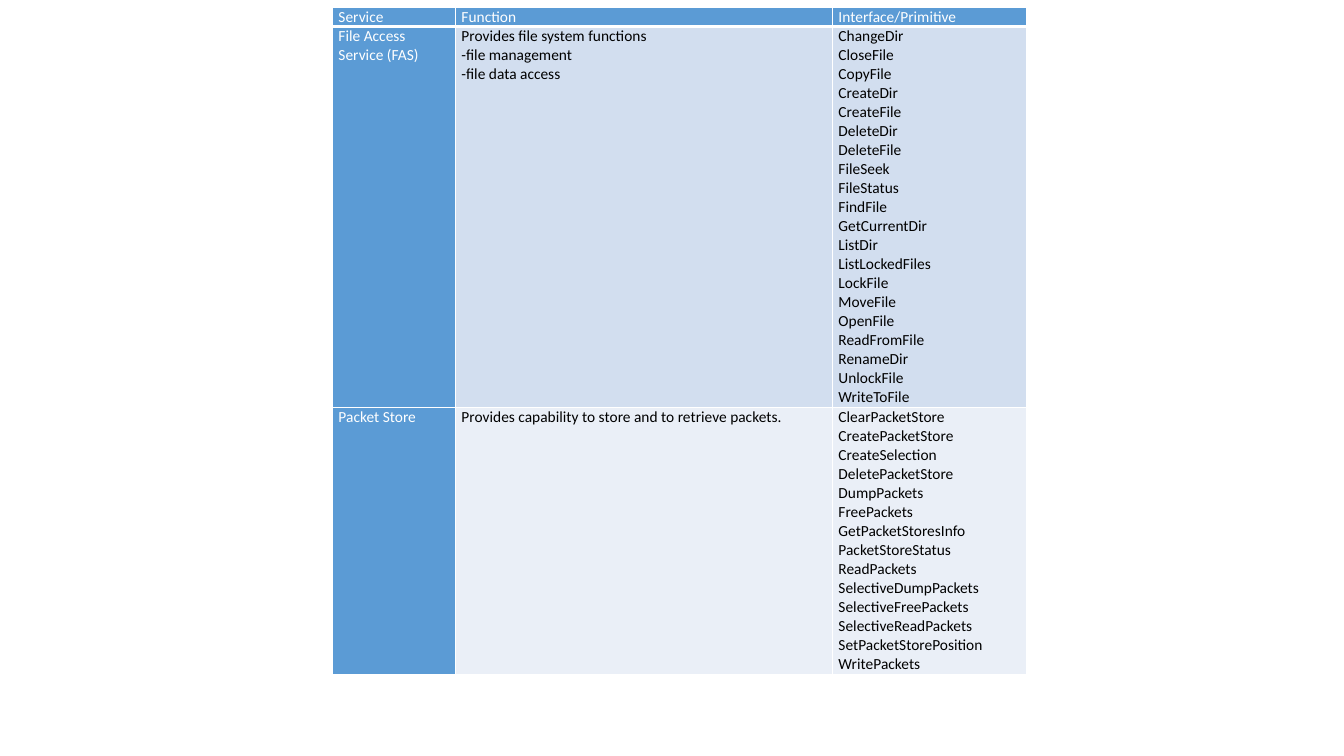
"""Build a slide with a table of storage services and their primitives."""
from lxml.etree import SubElement as add_element
from pptx import Presentation
from pptx.dml.color import RGBColor
from pptx.oxml.ns import qn
from pptx.util import Cm, Pt

WHITE = RGBColor(0xFF, 0xFF, 0xFF)
BLACK = RGBColor(0x00, 0x00, 0x00)
BLUE = RGBColor(0x5B, 0x9B, 0xD5)
BAND_DARK = RGBColor(0xD2, 0xDE, 0xEF)
BAND_LIGHT = RGBColor(0xEA, 0xEF, 0xF7)

LINE_HEIGHT = 0.48
COLUMN_WIDTHS = (3.1, 9.5, 4.9)
ROW_FILLS = (BLUE, BAND_DARK, BAND_LIGHT)

FILE_PRIMITIVES = [
    "ChangeDir", "CloseFile", "CopyFile", "CreateDir", "CreateFile",
    "DeleteDir", "DeleteFile", "FileSeek", "FileStatus", "FindFile",
    "GetCurrentDir", "ListDir", "ListLockedFiles", "LockFile", "MoveFile",
    "OpenFile", "ReadFromFile", "RenameDir", "UnlockFile", "WriteToFile",
]
PACKET_PRIMITIVES = [
    "ClearPacketStore", "CreatePacketStore", "CreateSelection",
    "DeletePacketStore", "DumpPackets", "FreePackets", "GetPacketStoresInfo",
    "PacketStoreStatus", "ReadPackets", "SelectiveDumpPackets",
    "SelectiveFreePackets", "SelectiveReadPackets", "SetPacketStorePosition",
    "WritePackets",
]
SERVICE_ROWS = [
    (["Service"], ["Function"], ["Interface/Primitive"]),
    (
        ["File Access Service (FAS)"],
        ["Provides file system functions", "-file management", "-file data access"],
        FILE_PRIMITIVES,
    ),
    (
        ["Packet Store"],
        ["Provides capability to store and to retrieve packets."],
        PACKET_PRIMITIVES,
    ),
]


def write_text(text_frame, lines, color=BLACK, size=11, font="Calibri"):
    """Write each line as a paragraph in the given format."""
    text_frame.text = "\n".join(lines)
    for paragraph in text_frame.paragraphs:
        for run in paragraph.runs:
            run.font.name = font
            run.font.size = Pt(size)
            run.font.bold = False
            run.font.color.rgb = color


def add_borders(cell, bottom_width=1):
    """Draw white borders around a cell."""
    properties = cell._tc.get_or_add_tcPr()
    for side, width in (("L", 1), ("R", 1), ("T", 1), ("B", bottom_width)):
        line = add_element(properties, qn(f"a:ln{side}"), w=str(Pt(width)))
        fill = add_element(line, qn("a:solidFill"))
        add_element(fill, qn("a:srgbClr"), val=str(WHITE))


def format_cell(cell, lines, fill, is_header):
    """Fill a cell with text, borders and a background."""
    cell.margin_left = cell.margin_right = Cm(0.15)
    cell.margin_top = cell.margin_bottom = 0
    add_borders(cell, bottom_width=3 if is_header else 1)
    cell.fill.solid()
    cell.fill.fore_color.rgb = fill
    write_text(cell.text_frame, lines, color=WHITE if fill == BLUE else BLACK)


def add_service_table(slide, left, top):
    """Add the table, with each row as tall as its longest cell."""
    heights = [LINE_HEIGHT * max(map(len, row)) for row in SERVICE_ROWS]
    table = slide.shapes.add_table(
        len(SERVICE_ROWS), len(COLUMN_WIDTHS), Cm(left), Cm(top),
        Cm(sum(COLUMN_WIDTHS)), Cm(sum(heights)),
    ).table
    table.horz_banding = False
    for column, width in zip(table.columns, COLUMN_WIDTHS):
        column.width = Cm(width)
    for row_index, (row, height) in enumerate(zip(SERVICE_ROWS, heights)):
        table.rows[row_index].height = Cm(height)
        for column_index, lines in enumerate(row):
            fill = ROW_FILLS[row_index] if column_index else BLUE
            cell = table.cell(row_index, column_index)
            format_cell(cell, lines, fill, is_header=row_index == 0)


def main():
    """Build and save the presentation."""
    presentation = Presentation()
    presentation.slide_width = Cm(33.87)
    presentation.slide_height = Cm(19.05)
    slide = presentation.slides.add_slide(presentation.slide_layouts[6])
    add_service_table(slide, left=8.38, top=0.19)
    presentation.save("out.pptx")


if __name__ == "__main__":
    main()
